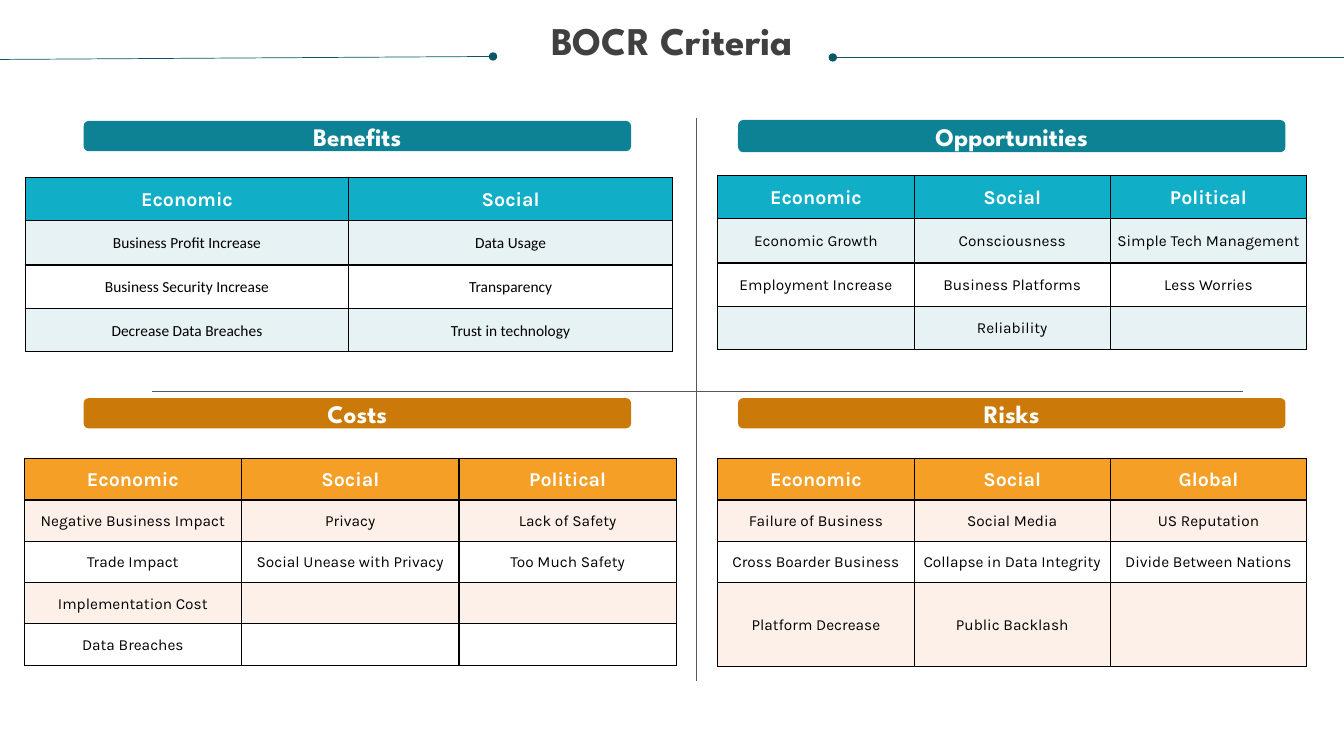
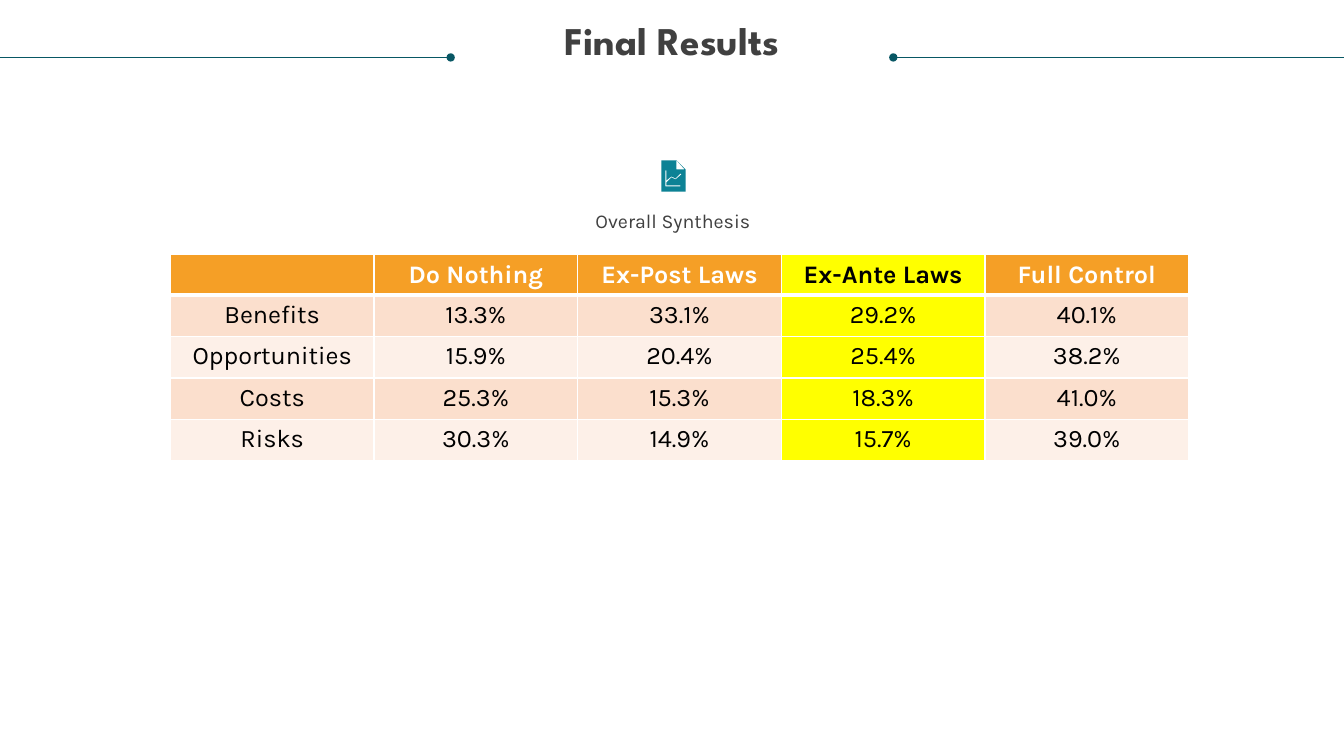
"""Build two slides: the BOCR criteria tables and the final results."""
import pptx
import pptx.dml.color
import pptx.enum.shapes
import pptx.enum.text
import pptx.oxml
import pptx.oxml.ns
import pptx.util

WHITE = pptx.dml.color.RGBColor(0xFF, 0xFF, 0xFF)
BLACK = pptx.dml.color.RGBColor(0x00, 0x00, 0x00)
GREY = pptx.dml.color.RGBColor(0x40, 0x40, 0x40)
RULE = pptx.dml.color.RGBColor(0x58, 0x58, 0x58)
DEEP = pptx.dml.color.RGBColor(0x08, 0x57, 0x64)
TEAL = pptx.dml.color.RGBColor(0x0D, 0x82, 0x95)
AQUA = pptx.dml.color.RGBColor(0x11, 0xAE, 0xC7)
ICE = pptx.dml.color.RGBColor(0xE7, 0xF2, 0xF5)
RUST = pptx.dml.color.RGBColor(0xCB, 0x7A, 0x09)
AMBER = pptx.dml.color.RGBColor(0xF5, 0x9F, 0x26)
PEACH = pptx.dml.color.RGBColor(0xFB, 0xDF, 0xCD)
CREAM = pptx.dml.color.RGBColor(0xFD, 0xF0, 0xE8)
YELLOW = pptx.dml.color.RGBColor(0xFF, 0xFF, 0x00)

MIDDLE = pptx.enum.text.MSO_ANCHOR.MIDDLE
TOP = pptx.enum.text.MSO_ANCHOR.TOP
SIDES = ("margin_left", "margin_right", "margin_top", "margin_bottom")
TIGHT = dict.fromkeys(SIDES, 0)
CENTRE = {"alignment": pptx.enum.text.PP_ALIGN.CENTER}
LOOSE = {**CENTRE, "line_spacing": 1.07}

TITLE = {"ink": GREY, "box": {**TIGHT, "word_wrap": True}, "para": {**CENTRE, "line_spacing": 0.9},
         "font": {"name": "League Spartan", "size": pptx.util.Pt(28), "bold": True}}
BAND = {"ink": WHITE, "box": {"vertical_anchor": MIDDLE}, "para": CENTRE,
        "font": {"name": "League Spartan", "size": pptx.util.Pt(18), "bold": True}}
HEAD = {"ink": WHITE, "box": {**TIGHT, "vertical_anchor": MIDDLE}, "para": LOOSE,
        "font": {"name": "Karla", "size": pptx.util.Pt(14), "bold": True}}
BODY = {**HEAD, "ink": BLACK,
        "font": {"name": "Karla", "size": pptx.util.Pt(11), "bold": False}}
PLAIN = {**BODY, "font": {**BODY["font"], "name": "Calibri"}}
NOTE = {"ink": GREY, "box": TITLE["box"], "para": {**CENTRE, "line_spacing": pptx.util.Pt(19)},
        "font": {"name": "Karla", "size": pptx.util.Pt(14)}}
TOTAL = {"ink": WHITE, "box": {"vertical_anchor": MIDDLE}, "para": CENTRE,
         "font": {"name": "Karla", "size": pptx.util.Pt(18), "bold": True}}
SCORE = {**TOTAL, "ink": BLACK, "box": {"vertical_anchor": TOP},
         "font": {**TOTAL["font"], "bold": False}}


def write(box, frame, text, look):
    """Put one styled line of text in a frame."""
    para = frame.paragraphs[0]
    run = para.add_run()
    run.text = text
    for part, values in ((box, look["box"]), (para, look["para"]), (run.font, look["font"])):
        for key, value in values.items():
            setattr(part, key, value)
    run.font.color.rgb = look["ink"]


def grid(slide, place, highs, rows, looks, fills, edge, thick=1):
    """Add a table with a head row, striped body and ruled cells."""
    left, top, width = place
    count = len(rows[0])
    table = slide.shapes.add_table(
        len(rows), count, *map(pptx.util.Inches, (left, top, width, sum(highs)))).table
    for col in table.columns:
        col.width = pptx.util.Inches(width / count)
    for r, row in enumerate(rows):
        table.rows[r].height = pptx.util.Inches(highs[r])
        for c, text in enumerate(row):
            cell = table.cell(r, c)
            cell.fill.solid()
            cell.fill.fore_color.rgb = fills[0] if r == 0 else fills[2 - r % 2]
            if text:
                write(cell, cell.text_frame, text, looks[min(r, 1)])
            wide = {"B": thick if r == 0 else 1, "T": thick if r == 1 else 1}
            for spot, side in enumerate("LRTB"):
                line = pptx.oxml.parse_xml(
                    f'<a:ln{side} {pptx.oxml.ns.nsdecls("a")} w="{pptx.util.Pt(wide.get(side, 1))}">'
                    f'<a:solidFill><a:srgbClr val="{edge}"/></a:solidFill></a:ln{side}>')
                cell._tc.get_or_add_tcPr().insert(spot, line)
    return table


deck = pptx.Presentation()
deck.slide_width = pptx.util.Inches(13.33)
deck.slide_height = pptx.util.Inches(7.5)

pages = [
    ("BOCR Criteria", [
        ((8.26, 0.57, 13.33, 0.57), DEEP), ((4.89, 0.56, 0, 0.59), DEEP),
        ((1.51, 3.88, 12.33, 3.88), RULE), ((6.91, 1.17, 6.91, 6.76), RULE)]),
    ("Final Results", [
        ((8.86, 0.57, 13.33, 0.57), DEEP), ((4.47, 0.57, 0, 0.57), DEEP)]),
]
slides = []
for title, lines in pages:
    slide = deck.slides.add_slide(deck.slide_layouts[6])
    slides.append(slide)
    box = slide.shapes.add_textbox(*map(pptx.util.Inches, (0.25, 0.21, 12.83, 0.73)))
    write(box.text_frame, box.text_frame, title, TITLE)
    for ends, ink in lines:
        line = slide.shapes.add_connector(
            pptx.enum.shapes.MSO_CONNECTOR.STRAIGHT, *map(pptx.util.Inches, ends))
        line.line.color.rgb = ink
        line.line.width = pptx.util.Pt(0.5)
        if ink == DEEP:
            line.line._get_or_add_ln().append(pptx.oxml.parse_xml(
                f'<a:headEnd {pptx.oxml.ns.nsdecls("a")} type="oval"/>'))
        line._element.spPr.append(pptx.oxml.parse_xml(
            f'<a:effectLst {pptx.oxml.ns.nsdecls("a")}/>'))
first, last = slides

COOL, WARM = (AQUA, ICE, WHITE), (AMBER, CREAM, WHITE)
UPPER = (0.43, 0.44, 0.43, 0.43)
parts = [
    ("Benefits", (0.83, 1.2, 5.43, 0.3), TEAL, (0.25, 1.76, 6.42), UPPER, COOL, PLAIN, [
        ("Economic", "Social"),
        ("Business Profit Increase", "Data Usage"),
        ("Business Security Increase", "Transparency"),
        ("Decrease Data Breaches", "Trust in technology")]),
    ("Opportunities", (7.32, 1.19, 5.43, 0.32), TEAL, (7.12, 1.74, 5.84), UPPER, COOL, BODY, [
        ("Economic", "Social", "Political"),
        ("Economic Growth", "Consciousness", "Simple Tech Management"),
        ("Employment Increase", "Business Platforms", "Less Worries"),
        ("", "Reliability", "")]),
    ("Costs", (0.83, 3.95, 5.43, 0.3), RUST, (0.24, 4.55, 6.47), (0.41,) * 5, WARM, BODY, [
        ("Economic", "Social", "Political"),
        ("Negative Business Impact", "Privacy", "Lack of Safety"),
        ("Trade Impact", "Social Unease with Privacy", "Too Much Safety"),
        ("Implementation Cost", "", ""),
        ("Data Breaches", "", "")]),
    ("Risks", (7.32, 3.95, 5.43, 0.3), RUST, (7.12, 4.55, 5.84), (0.41, 0.41, 0.41, 0.83), WARM, BODY, [
        ("Economic", "Social", "Global"),
        ("Failure of Business", "Social Media", "US Reputation"),
        ("Cross Boarder Business", "Collapse in Data Integrity", "Divide Between Nations"),
        ("Platform Decrease", "Public Backlash", "")]),
]
for name, spot, tint, place, highs, fills, look, rows in parts:
    band = first.shapes.add_shape(
        pptx.enum.shapes.MSO_SHAPE.ROUNDED_RECTANGLE, *map(pptx.util.Inches, spot))
    band.shadow.inherit = False
    band.fill.solid()
    band.fill.fore_color.rgb = tint
    band.line.fill.background()
    write(band.text_frame, band.text_frame, name, BAND)
    grid(first, place, highs, rows, (HEAD, look), fills, BLACK)

note = last.shapes.add_textbox(*map(pptx.util.Inches, (4.34, 2.04, 4.67, 0.24)))
write(note.text_frame, note.text_frame, "Overall Synthesis", NOTE)

page = [(656, 159), (671, 159), (680, 168), (680, 190), (656, 190)]
fold = [(671, 168), (671, 159), (679, 168)]
graph = [(675, 185), (660, 185), (660, 169), (661, 169), (661, 179), (666, 175), (670, 177),
         (675, 172), (676, 173), (670, 178), (666, 176), (661, 181), (661, 184), (675, 184)]
pen = last.shapes.build_freeform(*page[0], scale=pptx.util.Inches(0.01))
pen.add_line_segments(page[1:])
for hole in (fold, graph):
    pen.move_to(*hole[0])
    pen.add_line_segments(hole[1:])
icon = pen.convert_to_shape()
icon.shadow.inherit = False
icon.fill.solid()
icon.fill.fore_color.rgb = TEAL
icon.line.fill.background()

scores = [
    ("", "Do Nothing", "Ex-Post Laws", "Ex-Ante Laws", "Full Control"),
    ("Benefits", "13.3%", "33.1%", "29.2%", "40.1%"),
    ("Opportunities", "15.9%", "20.4%", "25.4%", "38.2%"),
    ("Costs", "25.3%", "15.3%", "18.3%", "41.0%"),
    ("Risks", "30.3%", "14.9%", "15.7%", "39.0%"),
]
table = grid(last, (1.69, 2.52, 10.1), (0.41,) * 5, scores, (TOTAL, SCORE),
             (AMBER, PEACH, CREAM), WHITE, 3)
for row in table.rows:
    cell = row.cells[3]
    cell.fill.solid()
    cell.fill.fore_color.rgb = YELLOW
    cell.text_frame.paragraphs[0].runs[0].font.color.rgb = BLACK

deck.save("out.pptx")
